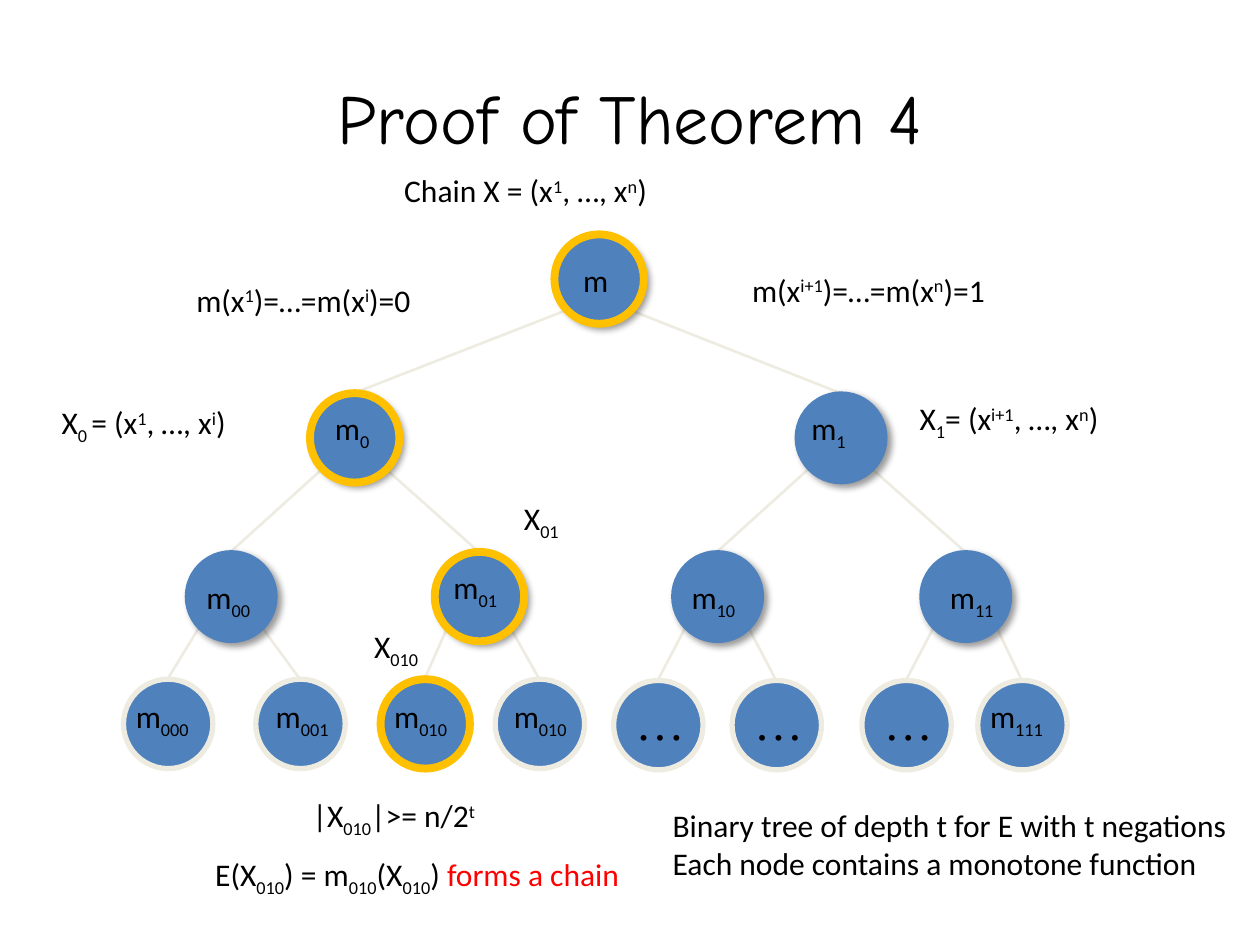
from dataclasses import dataclass

from lxml import etree
from pptx import Presentation
from pptx import util as u
from pptx.dml.color import RGBColor
from pptx.enum import shapes, text
from pptx.oxml.ns import qn

PX = 9144  # EMU in one px, 100 px to the inch
SIZE = 71  # node diameter
HALF = SIZE // 2
DIAG = 25  # offset from a node's centre to its lower corners
HEX = {"ink": "000000", "red": "FF0000", "node": "4F81BD",
       "pale": "EEECE1", "gold": "FFC000"}
BASE = {"_": "-25000", "^": "30000"}
MID, LEFT = text.PP_ALIGN.CENTER, text.PP_ALIGN.LEFT


@dataclass
class Node:
    key: str  # path from the root, one digit a level
    x: int
    y: int
    dx: int = 0  # label offset from the node's corner
    dy: int = 0
    name: str | None = None  # label index, the key by default
    gold: bool = False

    @property
    def leaf(self) -> bool:
        return len(self.key) == 3


@dataclass
class Note:
    x: int
    y: int
    w: int
    lines: list[str]
    align: text.PP_ALIGN = LEFT


NODES = [
    Node("", 440, 186, 13, 16, gold=True),
    Node("0", 246, 312, 10, 8, gold=True),
    Node("1", 632, 312, 2, 8),
    Node("00", 148, 438, 6, 16),
    Node("01", 345, 438, 5, 8, gold=True),
    Node("10", 534, 438, 5, 16),
    Node("11", 731, 438, 13, 16),
    Node("000", 98, 539, 0, 9),
    Node("001", 203, 539, 6, 9),
    Node("010", 302, 539, 1, 9, gold=True),
    Node("011", 393, 539, 5, 9, name="010"),
    Node("100", 487, 540, name="…"),
    Node("101", 581, 540, name="…"),
    Node("110", 684, 540, name="…"),
    Node("111", 776, 540, 0, 8),
]

# "~" parts the runs: "_" starts a subscript, "^" a superscript, "!" red text
NOTES = [
    Note(311, 131, 268, ["Chain X = (x~^1~, …, x~^n~)"]),
    Note(39, 315, 213, ["X~_0 ~= (x~^1~, …, x~^i~)"]),
    Note(146, 218, 195, ["m(x~^1~)=…=m(x~^i~)=0"]),
    Note(406, 391, 50, ["X~_01"]),
    Note(287, 493, 59, ["X~_010"]),
    Note(720, 312, 182, ["X~_1~= (x~^i+1~, …, x~^n~)"]),
    Note(587, 210, 211, ["m(x~^i+1~)=…=m(x~^n~)=1"]),
    Note(524, 635, 476, ["Binary tree of depth t for E with t negations",
                         "Each node contains a monotone function"]),
    Note(222, 627, 181, ["|X~_010~|>= n/2~^t"], MID),
    Note(161, 674, 396, ["E(X~_010~) = m~_010~(X~_010~) ~!forms a chain"]),
]


def rgb(name: str) -> RGBColor:
    return RGBColor.from_string(HEX[name])


def style(font, face: str, size: int) -> None:
    font.name, font.size = face, u.Pt(size)
    font.color.rgb = rgb("ink")


def write(slide, note: Note) -> None:
    box = slide.shapes.add_textbox(note.x * PX, note.y * PX, note.w * PX,
                                   (9 + 31 * len(note.lines)) * PX)
    frame = box.text_frame
    frame.word_wrap = True
    for i, line in enumerate(note.lines):
        par = frame.add_paragraph() if i else frame.paragraphs[0]
        par.alignment = note.align
        style(par.font, "Calibri", 18)
        for part in line.split("~"):
            mark = part[0] if part[0] in "_^!" else ""
            run = par.add_run()
            run.text = part[len(mark):]
            style(run.font, "Calibri", 18)
            if mark in BASE:
                run.font._element.set("baseline", BASE[mark])
            elif mark == "!":
                run.font.color.rgb = rgb("red")


def disc(slide, node: Node, line: str, width: float, fill: bool = True):
    oval = slide.shapes.add_shape(shapes.MSO_SHAPE.OVAL, node.x * PX,
                                  node.y * PX, SIZE * PX, SIZE * PX)
    oval.shadow.inherit = False
    if fill:
        oval.fill.solid()
        oval.fill.fore_color.rgb = rgb("node")
    else:
        oval.fill.background()
    oval.line.color.rgb = rgb(line)
    oval.line.width = u.Pt(width)
    return oval


def shade(shape) -> None:
    fx = shape._element.spPr.find(qn("a:effectLst"))
    drop = etree.SubElement(fx, qn("a:outerShdw"), blurRad="50800",
                            dist="38100", dir="2700000", algn="tl",
                            rotWithShape="0")
    tint = etree.SubElement(drop, qn("a:srgbClr"), val=HEX["ink"])
    etree.SubElement(tint, qn("a:alpha"), val="40000")


def edge(slide, top: Node, low: Node) -> None:
    side = -DIAG if low.key[-1] == "0" else DIAG
    line = slide.shapes.add_connector(
        shapes.MSO_CONNECTOR.STRAIGHT,
        (top.x + HALF + side) * PX, (top.y + HALF + DIAG) * PX,
        (low.x + HALF) * PX, low.y * PX)
    line.line.color.rgb = rgb("pale")
    line.line.width = u.Pt(1.5)
    etree.SubElement(line._element.spPr, qn("a:effectLst"))


def draw(slide, node: Node) -> None:
    if not node.leaf:
        shade(disc(slide, node, "node", 2))
        return
    oval = disc(slide, node, "pale", 3)
    if node.name == "…":
        frame = oval.text_frame
        frame.vertical_anchor = text.MSO_ANCHOR.BOTTOM
        par = frame.paragraphs[0]
        par.text, par.alignment = node.name, MID
        style(par.font, "Times New Roman", 28)
        par.font.italic = True


def label(slide, node: Node) -> None:
    name = node.name or node.key
    if name != "…":
        line = f"m~_{name}" if name else "m"
        write(slide, Note(node.x + node.dx, node.y + node.dy,
                          40 + 9 * len(name), [line]))


def main() -> None:
    deck = Presentation()
    deck.slide_width, deck.slide_height = 1000 * PX, 750 * PX
    slide = deck.slides.add_slide(deck.slide_layouts[5])

    # Title
    title = slide.shapes.title
    title.left, title.top = 50 * PX, 54 * PX
    title.width, title.height = 900 * PX, 77 * PX
    title.text_frame.text = "Proof of Theorem 4"
    title.text_frame.vertical_anchor = text.MSO_ANCHOR.MIDDLE
    head = title.text_frame.paragraphs[0]
    head.alignment = MID
    style(head.font, "Comic Neue", 40)

    # Tree: edges, nodes, gold rings along the chosen way, labels
    tree = {node.key: node for node in NODES}
    for node in NODES[1:]:
        edge(slide, tree[node.key[:-1]], node)
    for node in NODES:
        draw(slide, node)
    for node in NODES:
        if node.gold:
            disc(slide, node, "gold", 4.5, fill=False)
    for node in NODES:
        label(slide, node)

    # Formulas and remarks
    for note in NOTES:
        write(slide, note)
    deck.save("out.pptx")


if __name__ == "__main__":
    main()
